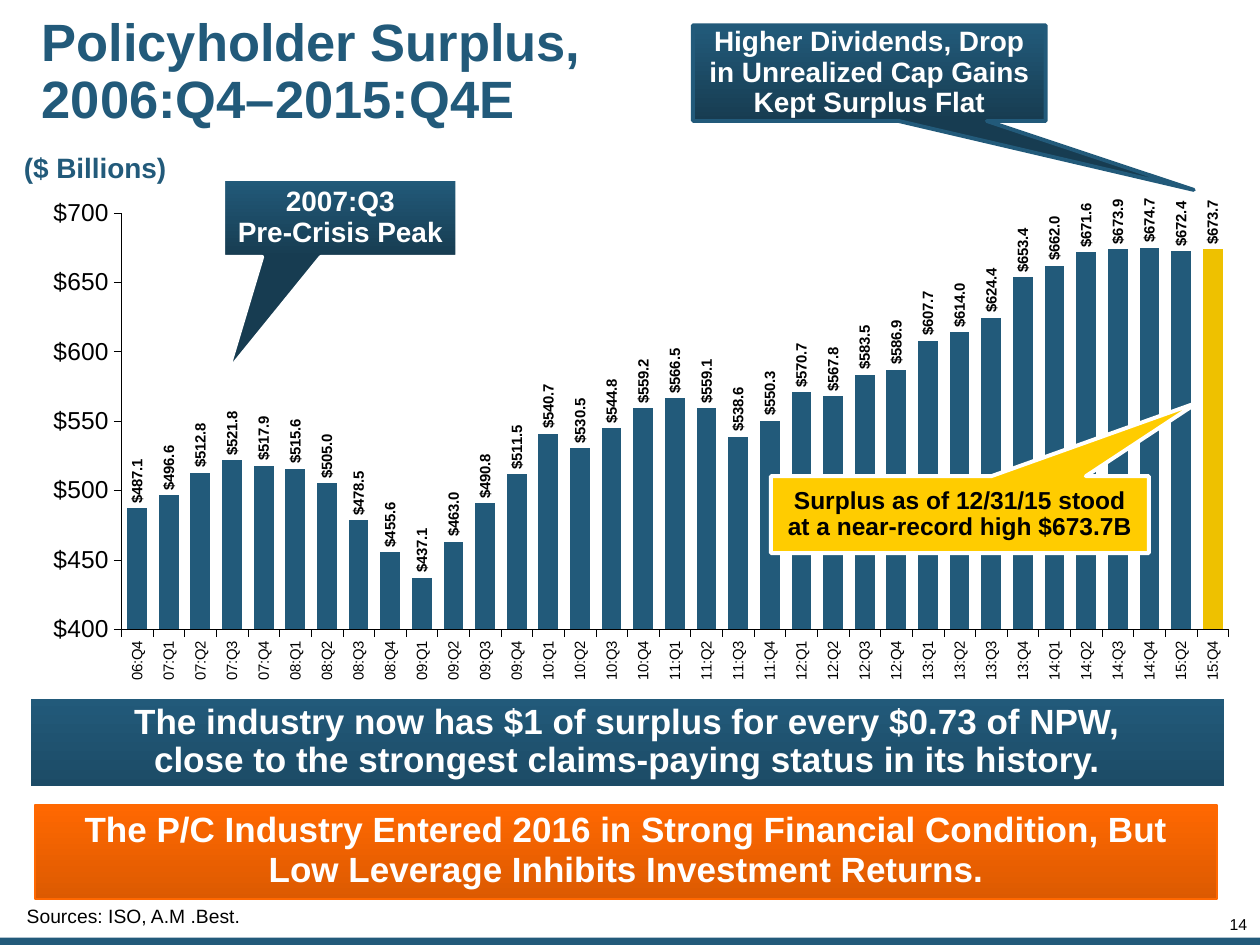
from lxml import etree
from pptx import Presentation
from pptx.chart.data import CategoryChartData
from pptx.dml.color import RGBColor
from pptx.enum.chart import XL_CHART_TYPE, XL_LABEL_POSITION, XL_TICK_MARK
from pptx.enum.shapes import MSO_SHAPE
from pptx.enum.text import MSO_ANCHOR, PP_ALIGN
from pptx.oxml.ns import qn
from pptx.util import Cm, Pt

RECTANGLE = MSO_SHAPE.RECTANGLE
CALLOUT = MSO_SHAPE.RECTANGULAR_CALLOUT
LEFT, CENTER, RIGHT = PP_ALIGN.LEFT, PP_ALIGN.CENTER, PP_ALIGN.RIGHT
TOP, MIDDLE, BOTTOM = MSO_ANCHOR.TOP, MSO_ANCHOR.MIDDLE, MSO_ANCHOR.BOTTOM

FONT = "Arial"
COLORS = {
    "blue": "225A7A", "navy": "173C51", "mid_blue": "1C4B66",
    "yellow": "FFCC00", "gold": "EEC100", "orange": "FF6801",
    "dark_orange": "DC5A01", "white": "FFFFFF", "black": "000000",
}

QUARTERS = [f"{year:02}:Q{quarter}" for year in range(6, 16) for quarter in range(1, 5)]
QUARTERS = [name for name in QUARTERS[3:] if name not in ("15:Q1", "15:Q3")]
SURPLUS = [
    487.1, 496.6, 512.8, 521.8, 517.9, 515.6, 505.0, 478.5, 455.6, 437.1, 463.0, 490.8,
    511.5, 540.7, 530.5, 544.8, 559.2, 566.5, 559.1, 538.6, 550.3, 570.7, 567.8, 583.5,
    586.9, 607.7, 614.0, 624.4, 653.4, 662.0, 671.6, 673.9, 674.7, 672.4, 673.7,
]


def rgb(name):
    return RGBColor.from_string(COLORS[name])


def place(box):
    return [Cm(length) for length in box]


def style_font(font, size, color="black", bold=False):
    font.name, font.size, font.bold = FONT, Pt(size), bold
    font.color.rgb = rgb(color)


def write_text(shape, lines, size, color, bold=True, align=LEFT, anchor=TOP,
               insets=(0, 0, 0, 0), spacing=0.9):
    """Fill the shape with one paragraph whose lines are split by line breaks."""
    frame = shape.text_frame
    frame.word_wrap = True
    frame.vertical_anchor = anchor
    (frame.margin_left, frame.margin_top,
     frame.margin_right, frame.margin_bottom) = place(insets)
    paragraph = frame.paragraphs[0]
    paragraph.alignment = align
    paragraph.line_spacing = spacing
    paragraph.space_before = Pt(0)
    for index, line in enumerate(lines):
        if index:
            paragraph.add_line_break()
        run = paragraph.add_run()
        run.text = line
        style_font(run.font, size, color, bold)


def add_label(slide, box, text, size, color="black", bold=False, **layout):
    write_text(slide.shapes.add_textbox(*place(box)), [text], size, color, bold, **layout)


def add_panel(slide, kind, box, colors, line=None, line_width=2.25, pointer=None):
    """Add a shape with a solid fill, or a top-to-bottom gradient for two colors."""
    shape = slide.shapes.add_shape(kind, *place(box))
    shape.shadow.inherit = False
    if len(colors) == 1:
        shape.fill.solid()
        shape.fill.fore_color.rgb = rgb(colors[0])
    else:
        shape.fill.gradient()
        shape.fill.gradient_angle = 270
        for stop, color in zip(shape.fill.gradient_stops, colors):
            stop.color.rgb = rgb(color)
    if line:
        shape.line.color.rgb = rgb(line)
        shape.line.width = Pt(line_width)
    else:
        shape.line.fill.background()
    for index, value in enumerate(pointer or ()):
        shape.adjustments[index] = value
    return shape


def add_callout(slide, box, pointer, colors, line, lines, size, color="white"):
    shape = add_panel(slide, CALLOUT, box, colors, line, pointer=pointer)
    write_text(shape, lines, size, color, align=CENTER, anchor=MIDDLE, insets=[0.25] * 4)


def turn_text_upright(element):
    body = element.find(qn("c:txPr")).find(qn("a:bodyPr"))
    body.set("rot", "-5400000")
    body.set("vert", "horz")


def set_plot_layout(chart, **fractions):
    plot_area = chart._chartSpace.chart.plotArea
    for old_layout in plot_area.findall(qn("c:layout")):
        plot_area.remove(old_layout)
    layout = etree.Element(qn("c:layout"))
    manual = etree.SubElement(layout, qn("c:manualLayout"))
    settings = {"layoutTarget": "inner", "xMode": "edge", "yMode": "edge", **fractions}
    for tag, value in settings.items():
        etree.SubElement(manual, qn(f"c:{tag}")).set("val", str(value))
    plot_area.insert(0, layout)


def style_axis(axis, size):
    axis.has_major_gridlines = False
    axis.major_tick_mark = XL_TICK_MARK.OUTSIDE
    axis.minor_tick_mark = XL_TICK_MARK.NONE
    axis.format.line.color.rgb = rgb("black")
    axis.format.line.width = Pt(0.25)
    style_font(axis.tick_labels.font, size)


def add_surplus_chart(slide, box):
    data = CategoryChartData()
    data.categories = QUARTERS
    data.add_series("Series 1", SURPLUS)
    chart = slide.shapes.add_chart(XL_CHART_TYPE.COLUMN_CLUSTERED, *place(box), data).chart
    chart.has_legend = False
    chart.has_title = False
    style_font(chart.font, 18)
    set_plot_layout(chart, x=0.07, y=0.053, w=0.931, h=0.837)

    style_axis(chart.category_axis, 8.5)
    turn_text_upright(chart.category_axis._element)
    value_axis = chart.value_axis
    style_axis(value_axis, 14)
    value_axis.minimum_scale, value_axis.maximum_scale = 400, 700
    value_axis.major_unit = 50
    value_axis.tick_labels.number_format = "\\$#,##0"
    value_axis.tick_labels.number_format_is_linked = False

    plot = chart.plots[0]
    plot.gap_width = 60
    plot.vary_by_categories = False
    series = plot.series[0]
    latest = series.points[len(SURPLUS) - 1]
    for bar, color in ((series, "blue"), (latest, "gold")):
        bar.format.fill.solid()
        bar.format.fill.fore_color.rgb = rgb(color)
    labels = series.data_labels
    labels.show_value = True
    labels.position = XL_LABEL_POSITION.OUTSIDE_END
    labels.number_format = "\\$#,##0.0"
    labels.number_format_is_linked = False
    style_font(labels.font, 8.5, bold=True)
    turn_text_upright(labels._element)


def add_title(slide, box, lines):
    title = slide.shapes.title
    title.left, title.top, title.width, title.height = place(box)
    write_text(title, lines, 30, "blue", anchor=MIDDLE, insets=[0.13] * 4)


def main():
    presentation = Presentation()
    presentation.slide_width, presentation.slide_height = Cm(25.4), Cm(19.05)
    slide = presentation.slides.add_slide(presentation.slide_layouts[5])

    add_panel(slide, RECTANGLE, (0, 18.9, 25.4, 0.15), ["blue"])
    add_title(slide, (0.71, 0.28, 11.99, 2.39), ["Policyholder Surplus, ", "2006:Q4–2015:Q4E"])
    add_label(slide, (23.9, 18.49, 1.24, 0.33), "14", 9, align=RIGHT, spacing=0.85)
    add_label(slide, (-0.48, 18.29, 5.72, 0.79), "Sources: ISO, A.M .Best.", 11,
              anchor=BOTTOM, insets=(1.02, 0, 0, 0.38), spacing=0.85)
    add_label(slide, (0.48, 3.12, 22.83, 0.61), "($ Billions)", 16, "blue", True)
    add_surplus_chart(slide, (0.79, 3.76, 23.98, 10.03))

    add_callout(slide, (4.5, 3.61, 4.72, 1.57), (-0.48, 1.97), ["blue", "navy"], "white",
                ["2007:Q3", "Pre-Crisis Peak"], 16)
    add_callout(slide, (15.54, 9.6, 7.62, 1.55), (0.63, -1.46), ["yellow"], "white",
                ["Surplus as of 12/31/15 stood at a near-record high $673.7B"], 14, "black")
    add_callout(slide, (0.58, 14.05, 24.13, 1.83), (0.5, 0.22), ["blue", "mid_blue"], "white",
                ["The industry now has $1 of surplus for every $0.73 of NPW,",
                 "close to the strongest claims-paying status in its history."], 20)
    add_callout(slide, (13.97, 0.51, 7.11, 1.93), (0.92, 1.22), ["blue", "navy"], "blue",
                ["Higher Dividends, Drop in Unrealized Cap Gains Kept Surplus Flat"], 16)

    conclusion = add_panel(slide, RECTANGLE, (0.71, 16.23, 23.83, 1.9),
                           ["orange", "dark_orange"], "orange", 1)
    write_text(conclusion, ["The P/C Industry Entered 2016 in Strong Financial Condition, But "
                            "Low Leverage Inhibits Investment Returns."], 20, "white",
               align=CENTER, anchor=MIDDLE, insets=(0.25, 0.13, 0.25, 0.18), spacing=0.95)
    presentation.save("out.pptx")


if __name__ == "__main__":
    main()
